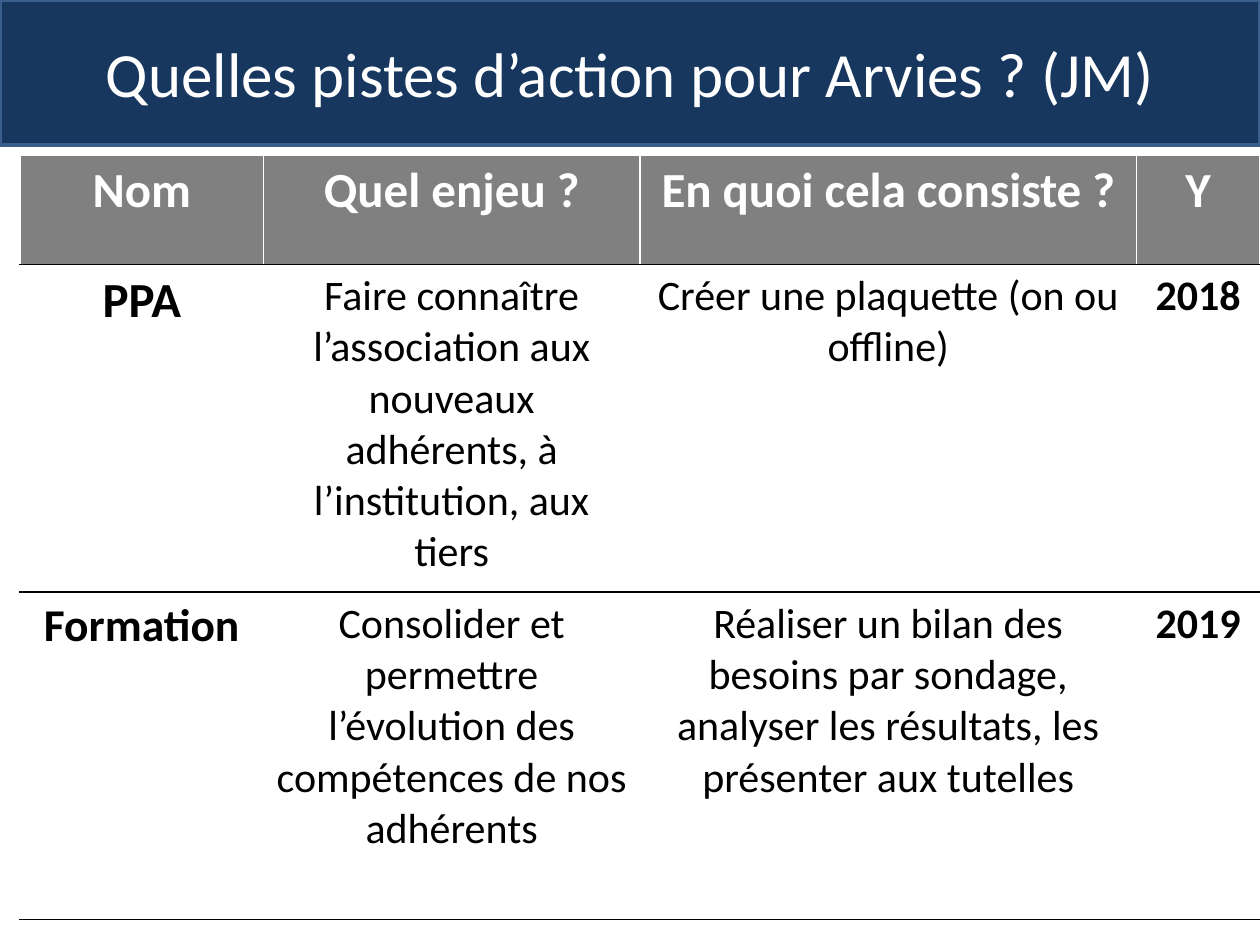
import pptx
import pptx.dml.color
import pptx.enum.text
import pptx.oxml
import pptx.oxml.ns
import pptx.util
from pptx.util import Inches

COLORS = {"navy": "17375E", "outline": "3A5F8C", "gray": "808080",
          "white": "FFFFFF", "black": "000000"}


def rgb(name):
    return pptx.dml.color.RGBColor.from_string(COLORS[name])


class ActionSlide:
    font_name = "Calibri"

    def __init__(self, presentation):
        # Layout 5 is "Title Only"
        self.slide = presentation.slides.add_slide(presentation.slide_layouts[5])

    def set_text(self, frame, text, size, color, bold=False):
        frame.text = text
        paragraph = frame.paragraphs[0]
        paragraph.alignment = pptx.enum.text.PP_ALIGN.CENTER
        font = paragraph.font
        font.name, font.size, font.bold = self.font_name, pptx.util.Pt(size), bold
        font.color.rgb = rgb(color)

    def title(self, text, height):
        banner = self.slide.shapes.title
        banner.left, banner.top = 0, 0
        banner.width, banner.height = Inches(10), Inches(height)
        banner.fill.solid()
        banner.fill.fore_color.rgb = rgb("navy")
        banner.line.color.rgb = rgb("outline")
        banner.line.width = pptx.util.Pt(2)
        frame = banner.text_frame
        frame.auto_size = pptx.enum.text.MSO_AUTO_SIZE.NONE
        frame.vertical_anchor = pptx.enum.text.MSO_ANCHOR.MIDDLE
        self.set_text(frame, text, 36, "white")

    def border(self, cell, side, color):
        cell._tc.get_or_add_tcPr().append(pptx.oxml.parse_xml(
            f'<a:ln{side} {pptx.oxml.ns.nsdecls("a")} w="12700"><a:solidFill>'
            f'<a:srgbClr val="{COLORS[color]}"/></a:solidFill></a:ln{side}>'))

    def table(self, left, top, widths, heights, rows):
        table = self.slide.shapes.add_table(
            len(rows), len(widths), Inches(left), Inches(top),
            Inches(sum(widths)), Inches(sum(heights))).table
        table.horz_banding = False
        for column, width in zip(table.columns, widths):
            column.width = Inches(width)
        for row, height in zip(table.rows, heights):
            row.height = Inches(height)
        for r, texts in enumerate(rows):
            header = r == 0
            for c, (text, size, bold) in enumerate(texts):
                cell = table.cell(r, c)
                # Borders come before the fill in the cell properties
                for side, color in (("L", "white"), ("R", "white"),
                                    ("T", "white" if header else "black"),
                                    ("B", "black")):
                    self.border(cell, side, color)
                if header:
                    cell.fill.solid()
                    cell.fill.fore_color.rgb = rgb("gray")
                else:
                    cell.fill.background()
                self.set_text(cell.text_frame, text, size,
                              "white" if header else "black", bold)


def main():
    presentation = pptx.Presentation()
    presentation.slide_width, presentation.slide_height = Inches(10), Inches(7.5)
    actions = ActionSlide(presentation)

    # Title banner
    actions.title("Quelles pistes d’action pour Arvies ? (JM)", 1.15)

    # Action plan: name, stake, content, year
    headings = ("Nom", "Quel enjeu ?", "En quoi cela consiste ?", "Y")
    plan = [
        ("PPA", 28,
         "Faire connaître l’association aux nouveaux adhérents, à l’institution, aux tiers",
         "Créer une plaquette (on ou offline)", "2018"),
        ("Formation", 26,
         "Consolider et permettre l’évolution des compétences de nos adhérents",
         "Réaliser un bilan des besoins par sondage, analyser les résultats, "
         "les présenter aux tutelles", "2019"),
    ]
    rows = [[(heading, 28, True) for heading in headings]]
    for name, name_size, stake, content, year in plan:
        rows.append([(name, name_size, True), (stake, 24, False),
                     (content, 24, False), (year, 24, True)])
    actions.table(0.16, 1.23, (1.93, 2.99, 3.94, 0.98), (0.87, 2.6, 2.6), rows)

    presentation.save("out.pptx")


if __name__ == "__main__":
    main()
